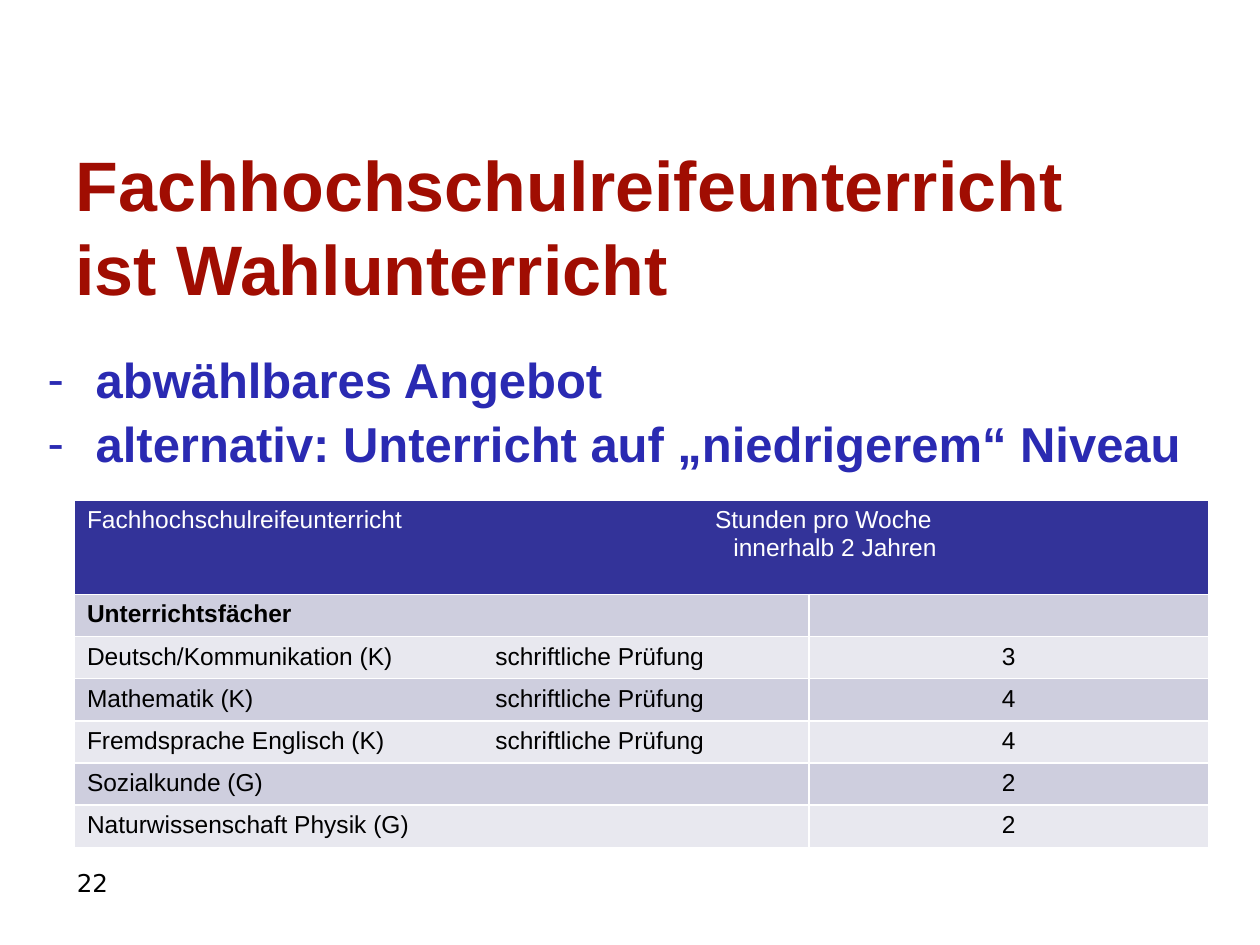
from dataclasses import dataclass

from lxml.etree import SubElement
from pptx import Presentation
from pptx.dml.color import RGBColor
from pptx.enum.text import MSO_ANCHOR, MSO_AUTO_SIZE, PP_ALIGN
from pptx.oxml.ns import qn
from pptx.util import Cm, Pt

WHITE, BLACK = "FFFFFF", "000000"
NAVY, DARK, LIGHT = "333399", "CECEDE", "E8E8EF"
WRITTEN = "schriftliche Prüfung"


@dataclass
class Style:
    size: float
    color: str
    bold: bool = False
    name: str = "Arial"


@dataclass
class Subject:
    name: str
    hours: str = ""
    exam: str = ""
    bold: bool = False


SUBJECTS = [
    Subject("Unterrichtsfächer", bold=True),
    Subject("Deutsch/Kommunikation (K)", "3", WRITTEN),
    Subject("Mathematik (K)", "4", WRITTEN),
    Subject("Fremdsprache Englisch (K)", "4", WRITTEN),
    Subject("Sozialkunde (G)", "2"),
    Subject("Naturwissenschaft Physik (G)", "2"),
]


def paint(color: str) -> RGBColor:
    return RGBColor.from_string(color)


def write(para, text: str, style: Style) -> None:
    """Fill a paragraph with text in one style."""
    para.text = text
    look = {"size": Pt(style.size), "bold": style.bold, "name": style.name}
    for run in para.runs:
        for key, value in look.items():
            setattr(run.font, key, value)
        run.font.color.rgb = paint(style.color)
    if not text:
        SubElement(para._p, qn("a:endParaRPr"), sz=str(int(style.size * 100)))


def place(shape, left: float, top: float, width: float, height: float) -> None:
    box = {"left": left, "top": top, "width": width, "height": height}
    for key, value in box.items():
        setattr(shape, key, Cm(value))


def add_box(slide, *box: float):
    frame = slide.shapes.add_textbox(*map(Cm, box)).text_frame
    frame.word_wrap = True
    return frame


def add_tabs(para, *stops: float) -> None:
    tabs = SubElement(para._p.get_or_add_pPr(), qn("a:tabLst"))
    for stop in stops:
        SubElement(tabs, qn("a:tab"), pos=str(Cm(stop)), algn="l")


def add_dash(para, indent: float) -> None:
    props = para._p.get_or_add_pPr()
    props.set("marL", str(Cm(indent)))
    props.set("indent", str(-Cm(indent)))
    SubElement(props, qn("a:buFont"), typeface="Arial")
    SubElement(props, qn("a:buChar"), char="-")


def dress(cell, fill: str) -> None:
    """Give a cell white borders and a plain fill."""
    props = cell._tc.get_or_add_tcPr()
    for side in ("lnL", "lnR", "lnT", "lnB"):
        line = SubElement(props, qn(f"a:{side}"), w=str(Pt(1)))
        solid = SubElement(line, qn("a:solidFill"))
        SubElement(solid, qn("a:srgbClr"), val=WHITE)
    cell.fill.solid()
    cell.fill.fore_color.rgb = paint(fill)


def add_plan(slide) -> None:
    heights = [1.9] + [0.85] * len(SUBJECTS)
    widths = [14.81, 8.05]
    box = map(Cm, (1.5, 10.08, sum(widths), sum(heights)))
    table = slide.shapes.add_table(len(heights), len(widths), *box).table
    for col, width in zip(table.columns, widths):
        col.width = Cm(width)
    for row, height in zip(table.rows, heights):
        row.height = Cm(height)

    # Header across both columns
    head = table.cell(0, 0)
    head.merge(table.cell(0, 1))
    for cell in table.rows[0].cells:
        dress(cell, NAVY)
    frame = head.text_frame
    lines = ["Fachhochschulreifeunterricht\tStunden pro Woche",
             "\t\tinnerhalb 2 Jahren"]
    for i, text in enumerate(lines):
        para = frame.add_paragraph() if i else frame.paragraphs[0]
        add_tabs(para, 12.66, 13.03)
        write(para, text, Style(14, WHITE))

    # One banded row per subject
    for i, item in enumerate(SUBJECTS, 1):
        name, hours = table.rows[i].cells
        for cell in (name, hours):
            dress(cell, DARK if i % 2 else LIGHT)
        para = name.text_frame.paragraphs[0]
        text = item.name
        if item.exam:
            add_tabs(para, 8.23)
            text += f"\t{item.exam}"
        write(para, text, Style(14, BLACK, item.bold))
        para = hours.text_frame.paragraphs[0]
        para.alignment = PP_ALIGN.CENTER
        write(para, item.hours, Style(14, BLACK))


def main() -> None:
    deck = Presentation()
    deck.slide_width, deck.slide_height = Cm(25.4), Cm(19.05)
    slide = deck.slides.add_slide(deck.slide_layouts[5])

    # Title
    title = slide.shapes.title
    place(title, 1.27, 3.45, 20.6, 2.21)
    frame = title.text_frame
    look = {"auto_size": MSO_AUTO_SIZE.NONE, "word_wrap": True,
            "vertical_anchor": MSO_ANCHOR.MIDDLE}
    for key, value in look.items():
        setattr(frame, key, value)
    para = frame.paragraphs[0]
    para.alignment = PP_ALIGN.LEFT
    write(para, "Fachhochschulreifeunterricht\vist Wahlunterricht",
          Style(40, "A00D02", True))

    # Page number
    frame = add_box(slide, 1.3, 17.37, 5.92, 1.32)
    write(frame.paragraphs[0], "22", Style(14, BLACK, name="DejaVu Sans"))

    add_plan(slide)

    # Key points
    frame = add_box(slide, 0.71, 7.06, 23.65, 2.44)
    points = ["abwählbares Angebot",
              "alternativ: Unterricht auf „niedrigerem“ Niveau"]
    for i, text in enumerate(points):
        para = frame.add_paragraph() if i else frame.paragraphs[0]
        add_dash(para, 0.97)
        para.line_spacing = 0.9
        if i:
            para.space_before = Pt(6.4)
        write(para, text, Style(28, "2A2AB2", True))

    deck.save("out.pptx")


if __name__ == "__main__":
    main()
